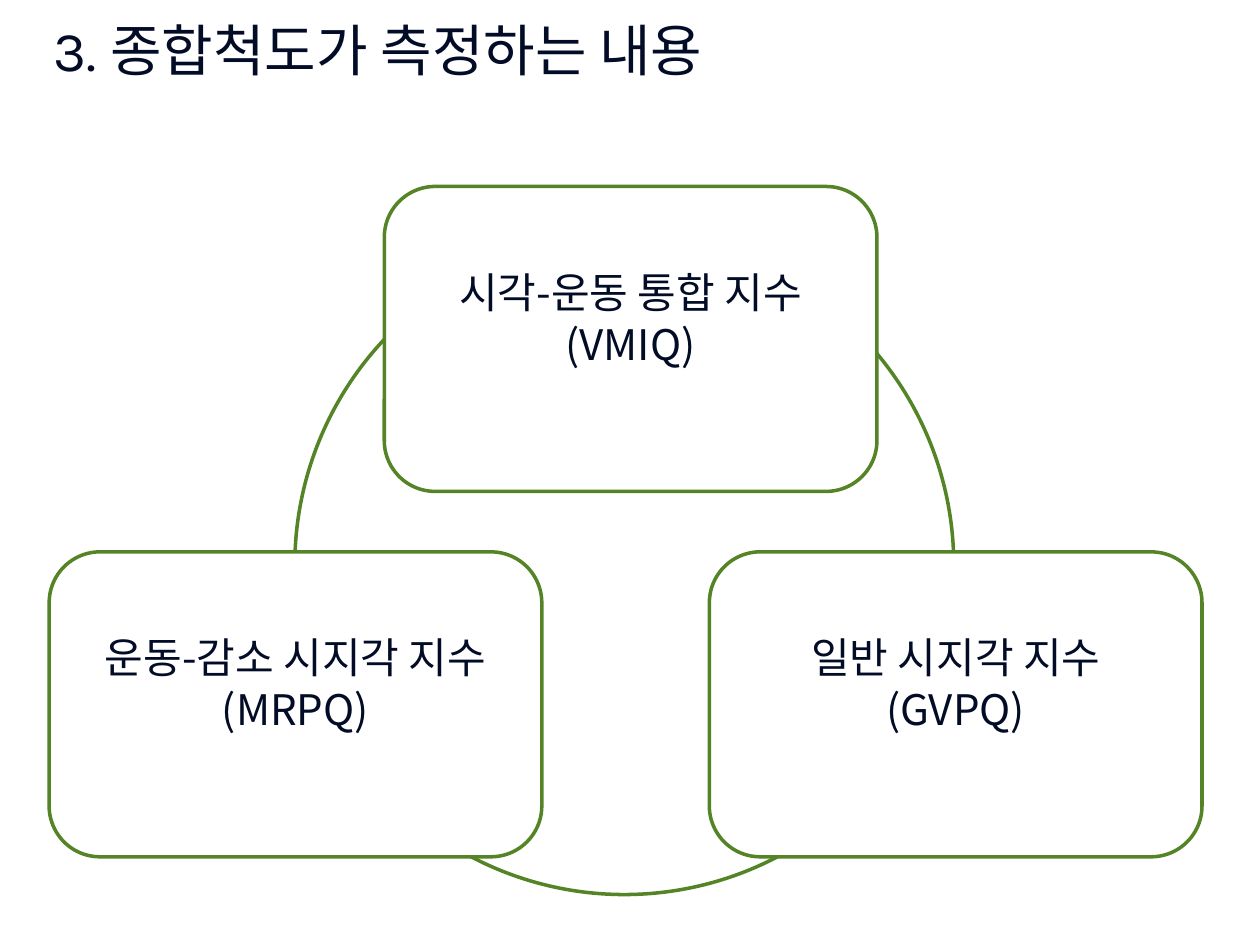
from dataclasses import dataclass

import pptx
import pptx.dml.color
import pptx.enum.shapes
import pptx.enum.text
import pptx.oxml
import pptx.oxml.ns
import pptx.util
from pptx.util import Inches

SHAPES = pptx.enum.shapes.MSO_SHAPE
ALIGN = pptx.enum.text.PP_ALIGN


@dataclass(frozen=True)
class Theme:
    ink: str = "020C27"
    green: str = "548426"
    paper: str = "FFFFFF"
    title_font: str = "Karla"
    body_font: str = "Noto Sans CJK KR"
    title_size: float = 32
    index_size: float = 24
    index_leading: float = 29.5
    outline: float = 2


@dataclass(frozen=True)
class Index:
    name: str
    code: str
    left: float
    top: float


THEME = Theme()
CARD_WIDTH, CARD_HEIGHT = 3.91, 2.42
LOWER_ROW = 4.38
INDICES = (
    Index("시각-운동 통합 지수", "(VMIQ)", 3.05, 1.48),
    Index("운동-감소 시지각 지수", "(MRPQ)", 0.39, LOWER_ROW),
    Index("일반 시지각 지수", "(GVPQ)", 5.63, LOWER_ROW),
)


def color(value: str) -> pptx.dml.color.RGBColor:
    return pptx.dml.color.RGBColor.from_string(value)


def write(holder, lines: tuple[str, ...], *, font: str, size: float,
          align=ALIGN.LEFT, leading: float | None = None,
          bottom_inset: float = 0.05) -> None:
    frame = holder.text_frame
    frame.word_wrap = True
    frame.vertical_anchor = pptx.enum.text.MSO_ANCHOR.MIDDLE
    frame.margin_bottom = Inches(bottom_inset)
    for number, line in enumerate(lines):
        paragraph = frame.add_paragraph() if number else frame.paragraphs[0]
        paragraph.alignment = align
        if leading:
            paragraph.line_spacing = pptx.util.Pt(leading)
        run = paragraph.add_run()
        run.text = line
        run.font.size = pptx.util.Pt(size)
        run.font.color.rgb = color(THEME.ink)
        run.font.name = font
        east_asian = pptx.oxml.parse_xml(
            f'<a:ea {pptx.oxml.ns.nsdecls("a")} typeface="{THEME.body_font}"/>')
        run.font._element.append(east_asian)


def add_outlined(slide, preset, left: float, top: float, width: float, height: float):
    shape = slide.shapes.add_shape(
        preset, Inches(left), Inches(top), Inches(width), Inches(height))
    shape.shadow.inherit = False
    shape.fill.solid()
    shape.fill.fore_color.rgb = color(THEME.paper)
    shape.line.color.rgb = color(THEME.green)
    shape.line.width = pptx.util.Pt(THEME.outline)
    return shape


def add_index(slide, index: Index) -> None:
    card = add_outlined(slide, SHAPES.ROUNDED_RECTANGLE, index.left, index.top,
                        CARD_WIDTH, CARD_HEIGHT)
    write(card, (index.name, index.code), font=THEME.body_font,
          size=THEME.index_size, align=ALIGN.CENTER,
          leading=THEME.index_leading, bottom_inset=0.4)


def main() -> None:
    deck = pptx.Presentation()
    deck.slide_width, deck.slide_height = Inches(10), Inches(7.5)
    slide = deck.slides.add_slide(deck.slide_layouts[6])
    slide.background.fill.solid()
    slide.background.fill.fore_color.rgb = color(THEME.paper)

    add_outlined(slide, SHAPES.OVAL, 2.34, 1.87, 5.23, 5.23)
    title = slide.shapes.add_textbox(Inches(0.33), Inches(0), Inches(9), Inches(0.78))
    write(title, ("3. 종합척도가 측정하는 내용",), font=THEME.title_font,
          size=THEME.title_size)
    for index in INDICES:
        add_index(slide, index)

    deck.save("out.pptx")


if __name__ == "__main__":
    main()
